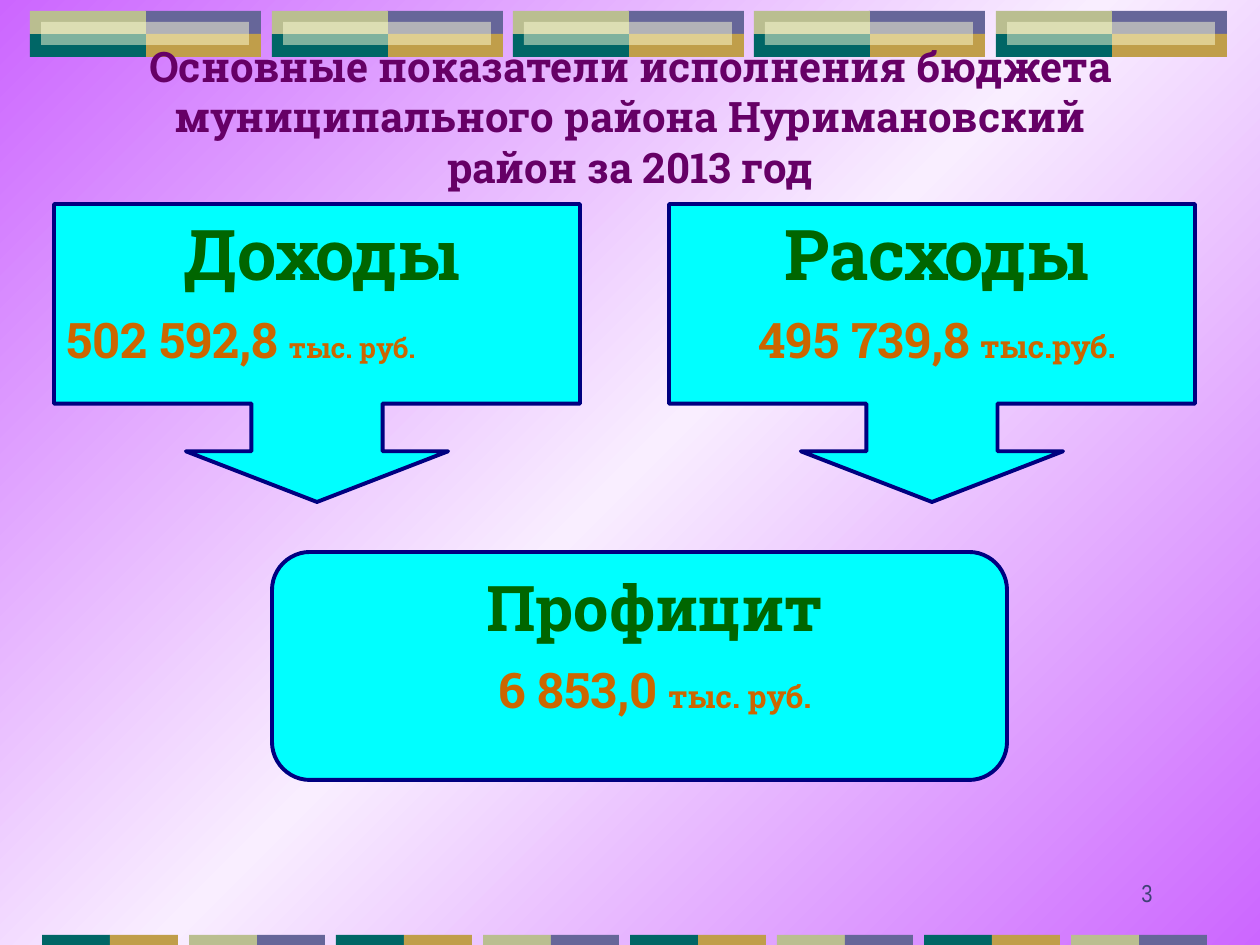
from copy import deepcopy

from pptx import Presentation
from pptx.dml.color import RGBColor
from pptx.enum.shapes import MSO_SHAPE as Shape
from pptx.enum.text import MSO_ANCHOR as Anchor, MSO_AUTO_SIZE as AutoSize, PP_ALIGN as Align
from pptx.oxml.ns import qn
from pptx.oxml.xmlchemy import OxmlElement
from pptx.util import Emu, Pt

ORCHID = RGBColor(0xCC, 0x66, 0xFF)
PALE = RGBColor(0xF9, 0xEE, 0xFF)
SLATE = RGBColor(0x66, 0x66, 0x99)
GOLD = RGBColor(0xC0, 0x9E, 0x4A)
TEAL = RGBColor(0x00, 0x66, 0x66)
OLIVE = RGBColor(0xBA, 0xBE, 0x90)
CREAM = RGBColor(0xFE, 0xFE, 0xD6)
CYAN = RGBColor(0x00, 0xFF, 0xFF)
NAVY = RGBColor(0x00, 0x00, 0x80)
PURPLE = RGBColor(0x66, 0x00, 0x66)
GREEN = RGBColor(0x00, 0x66, 0x00)
ORANGE = RGBColor(0xCC, 0x66, 0x00)
INDIGO = RGBColor(0x40, 0x41, 0x76)

SERIF = "Roboto Slab"
NARROW = "Arial Narrow"
PX_PER_INCH = 126


def px(length):
    return Emu(round(length * 914400 / PX_PER_INCH))


class SlideBuilder:
    def __init__(self, slide):
        self.slide = slide

    def background(self, outer, middle):
        fill = self.slide.background.fill
        fill.gradient()
        fill.gradient_angle = 315
        stops = next(self.slide.element.iter(qn("a:gsLst")))
        stops.append(deepcopy(stops[-1]))
        for stop, color, position in zip(fill.gradient_stops, (outer, middle, outer), (0, 0.5, 1)):
            stop.color.rgb = color
            stop.position = position

    def shape(self, kind, bounds, color, outline=None, alpha=None, adjustments=()):
        shape = self.slide.shapes.add_shape(kind, *map(px, bounds))
        shape.shadow.inherit = False
        shape.fill.solid()
        shape.fill.fore_color.rgb = color
        if outline is None:
            shape.line.fill.background()
        else:
            shape.line.color.rgb = outline
            shape.line.width = Pt(2.25)
        if alpha is not None:
            node = OxmlElement("a:alpha")
            node.set("val", str(alpha * 1000))
            next(shape.element.spPr.iter(qn("a:srgbClr"))).append(node)
        for index, value in enumerate(adjustments):
            shape.adjustments[index] = value

    def format(self, span, size, color, font=SERIF, bold=True):
        span.font.size = Pt(size)
        span.font.name = font
        span.font.bold = bold
        span.font.color.rgb = color

    def text(self, bounds, text, size, color, align=Align.CENTER, anchor=Anchor.TOP,
             font=SERIF, bold=True):
        box = self.slide.shapes.add_textbox(*map(px, bounds))
        frame = box.text_frame
        frame.word_wrap = True
        frame.vertical_anchor = anchor
        frame.text = text
        para = frame.paragraphs[0]
        para.alignment = align
        self.format(para.runs[0], size, color, font, bold)
        return frame

    def amount(self, bounds, heading, heading_size, parts, align=Align.CENTER):
        frame = self.text(bounds, heading, heading_size, GREEN)
        frame.auto_size = AutoSize.SHAPE_TO_FIT_TEXT
        para = frame.add_paragraph()
        para.alignment = align
        para.space_before = Pt(9)
        for text, size in parts:
            span = para.add_run()
            span.text = text
            self.format(span, size, ORANGE)

    def top_tile(self, left):
        for column, row, color in ((1, 0, SLATE), (1, 1, GOLD), (0, 1, TEAL), (0, 0, OLIVE)):
            self.shape(Shape.RECTANGLE, (left + 115 * column, 11 + 23 * row, 116, 23), color)
        self.shape(Shape.RECTANGLE, (left + 11, 22, 208, 23), CREAM, alpha=50)

    def bottom_tile(self, left, colors):
        for column, color in enumerate(colors):
            self.shape(Shape.RECTANGLE, (left + 68 * column, 935, 68, 10), color)


def main():
    deck = Presentation()
    deck.slide_width, deck.slide_height = px(1260), px(945)
    page = SlideBuilder(deck.slides.add_slide(deck.slide_layouts[6]))
    page.background(ORCHID, PALE)

    for index in range(5):
        page.top_tile(round(30 + 241.5 * index))
    for index in range(8):
        page.bottom_tile(42 + 147 * index, (OLIVE, SLATE) if index % 2 else (TEAL, GOLD))

    page.text((903, 851, 262, 63), "3", 14, INDIGO, Align.RIGHT, Anchor.BOTTOM, NARROW, False)
    page.text((95, 66, 1071, 100),
              "Основные показатели исполнения бюджета муниципального района "
              "Нуримановский район за 2013 год", 24, PURPLE, anchor=Anchor.MIDDLE)

    for left in (54, 669):
        page.shape(Shape.DOWN_ARROW_CALLOUT, (left, 204, 526, 298), CYAN, NAVY,
                   adjustments=(0.44, 0.44, 0.17, 0.67))
    page.shape(Shape.FLOWCHART_ALTERNATE_PROCESS, (272, 552, 735, 228), CYAN, NAVY)

    page.amount((54, 204, 536, 185), "Доходы", 40,
                (("502 592,8", 28), (" ", 24), ("тыс. руб.", 16)), Align.LEFT)
    page.amount((372, 562, 566, 176), "Профицит", 36,
                (("6 853,0", 28), (" ", 26), ("тыс. руб.", 18)))
    page.amount((669, 204, 536, 248), "Расходы", 40,
                (("495 739,8", 28), (" ", 24), ("тыс.руб.", 18)))

    deck.save("out.pptx")


if __name__ == "__main__":
    main()
